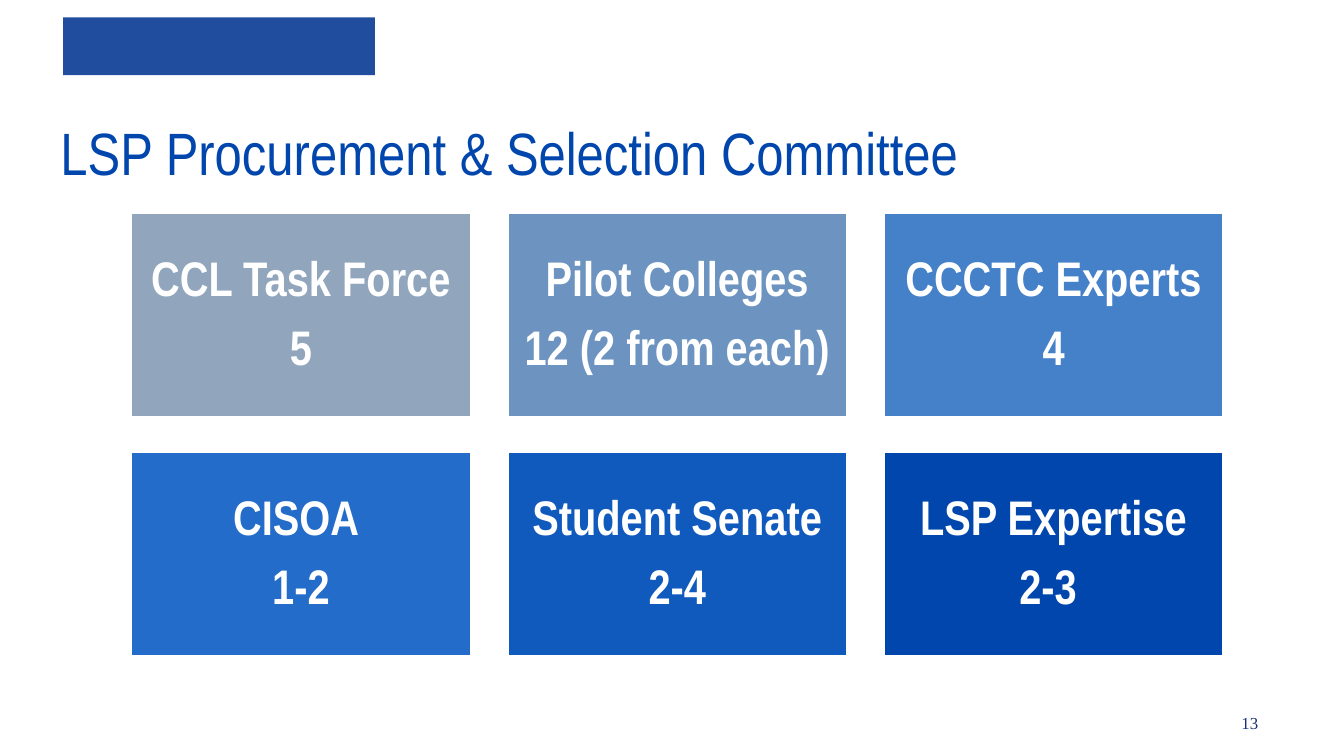
from pptx import Presentation
from pptx.dml.color import RGBColor
from pptx.enum.shapes import MSO_SHAPE
from pptx.enum.text import MSO_ANCHOR, PP_ALIGN
from pptx.util import Inches, Pt

COLORS = {
    "title": "0046AD",
    "banner": "204D9E",
    "number": "1B3075",
    "white": "FFFFFF",
}
COMMITTEE = [
    ("CCL Task Force", "5", "91A6BC"),
    ("Pilot Colleges", "12 (2 from each)", "6D94C0"),
    ("CCCTC Experts", "4", "4581C8"),
    ("CISOA ", "1-2", "246CC9"),
    ("Student Senate", "2-4", "1059BD"),
    ("LSP Expertise", "2-3 ", "0046AD"),
]
COLUMNS = 3
GRID_LEFT, GRID_TOP = 0.97, 1.58
CARD_WIDTH, CARD_HEIGHT = 2.54, 1.53
COLUMN_STEP, ROW_STEP = 2.8, 1.78


def rgb(color):
    return RGBColor.from_string(color)


def write(shape, *lines, size, color, font="Arial Narrow", bold=False,
          align=PP_ALIGN.LEFT, anchor=MSO_ANCHOR.TOP, inset=(0.1, 0.05),
          line_spacing=1.0, space_after=0):
    """Fill a shape with one formatted paragraph per line."""
    frame = shape.text_frame
    frame.word_wrap = True
    frame.vertical_anchor = anchor
    frame.margin_left = frame.margin_right = Inches(inset[0])
    frame.margin_top = frame.margin_bottom = Inches(inset[1])
    frame.text = "\n".join(lines)
    for paragraph in frame.paragraphs:
        paragraph.alignment = align
        paragraph.line_spacing = line_spacing
        paragraph.space_before = Pt(0)
        paragraph.space_after = Pt(space_after)
        for run in paragraph.runs:
            run.font.name = font
            run.font.size = Pt(size)
            run.font.bold = bold
            run.font.color.rgb = rgb(color)


def add_block(slide, left, top, width, height, fill, outline=None):
    block = slide.shapes.add_shape(
        MSO_SHAPE.RECTANGLE, *map(Inches, (left, top, width, height)))
    block.shadow.inherit = False
    block.fill.solid()
    block.fill.fore_color.rgb = rgb(fill)
    if outline:
        block.line.color.rgb = rgb(outline)
        block.line.width = Pt(2)
    else:
        block.line.fill.background()
    return block


def add_title(slide, text):
    title = slide.shapes.title
    title.left, title.top = Inches(0.35), Inches(0.81)
    title.width, title.height = Inches(8.39), Inches(0.94)
    write(title, text, size=32, color=COLORS["title"])


def add_page_number(slide, number):
    box = slide.shapes.add_textbox(*map(Inches, (7.97, 5.25, 1.49, 0.25)))
    write(box, number, size=9, color=COLORS["number"],
          font="Times New Roman", align=PP_ALIGN.RIGHT,
          anchor=MSO_ANCHOR.MIDDLE)


def add_committee_grid(slide):
    for index, (group, seats, fill) in enumerate(COMMITTEE):
        row, column = divmod(index, COLUMNS)
        card = add_block(slide, GRID_LEFT + column * COLUMN_STEP,
                         GRID_TOP + row * ROW_STEP, CARD_WIDTH, CARD_HEIGHT,
                         fill, outline=COLORS["white"])
        write(card, group, seats, size=26, color=COLORS["white"], bold=True,
              align=PP_ALIGN.CENTER, anchor=MSO_ANCHOR.MIDDLE,
              inset=(0.11, 0.11), line_spacing=0.9, space_after=9)


def main():
    deck = Presentation()
    deck.slide_width = Inches(10)
    deck.slide_height = deck.slide_width * 9 // 16
    slide = deck.slides.add_slide(deck.slide_layouts[5])
    add_page_number(slide, "13")
    add_block(slide, 0.47, 0.13, 2.32, 0.43, COLORS["banner"])
    add_title(slide, "LSP Procurement & Selection Committee")
    add_committee_grid(slide)
    deck.save("out.pptx")


if __name__ == "__main__":
    main()
